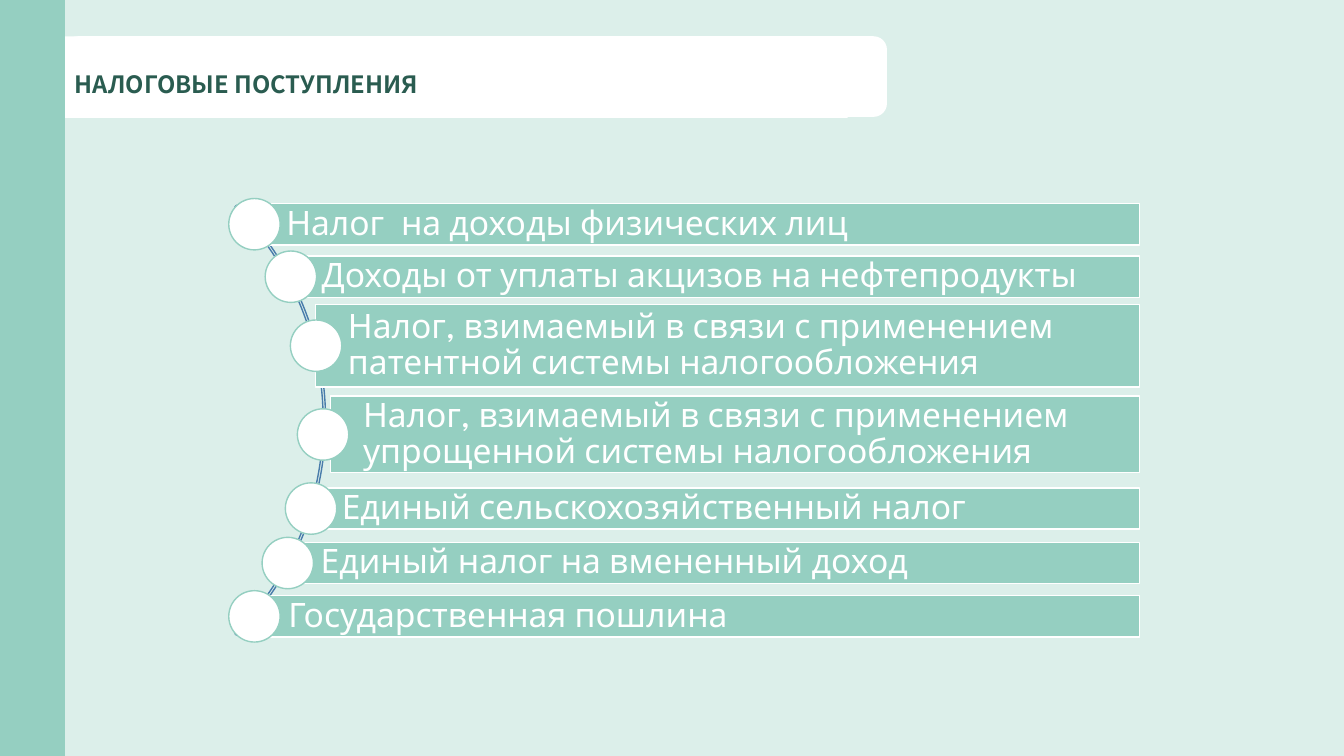
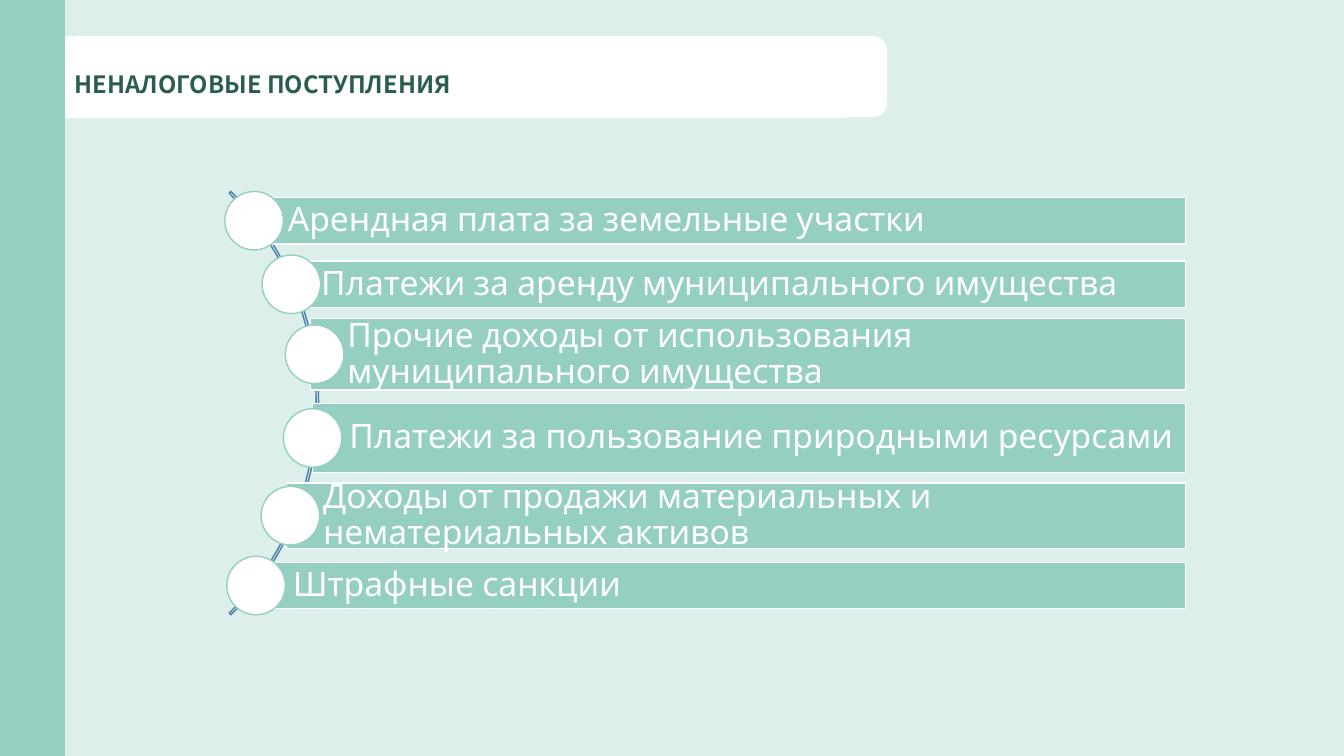
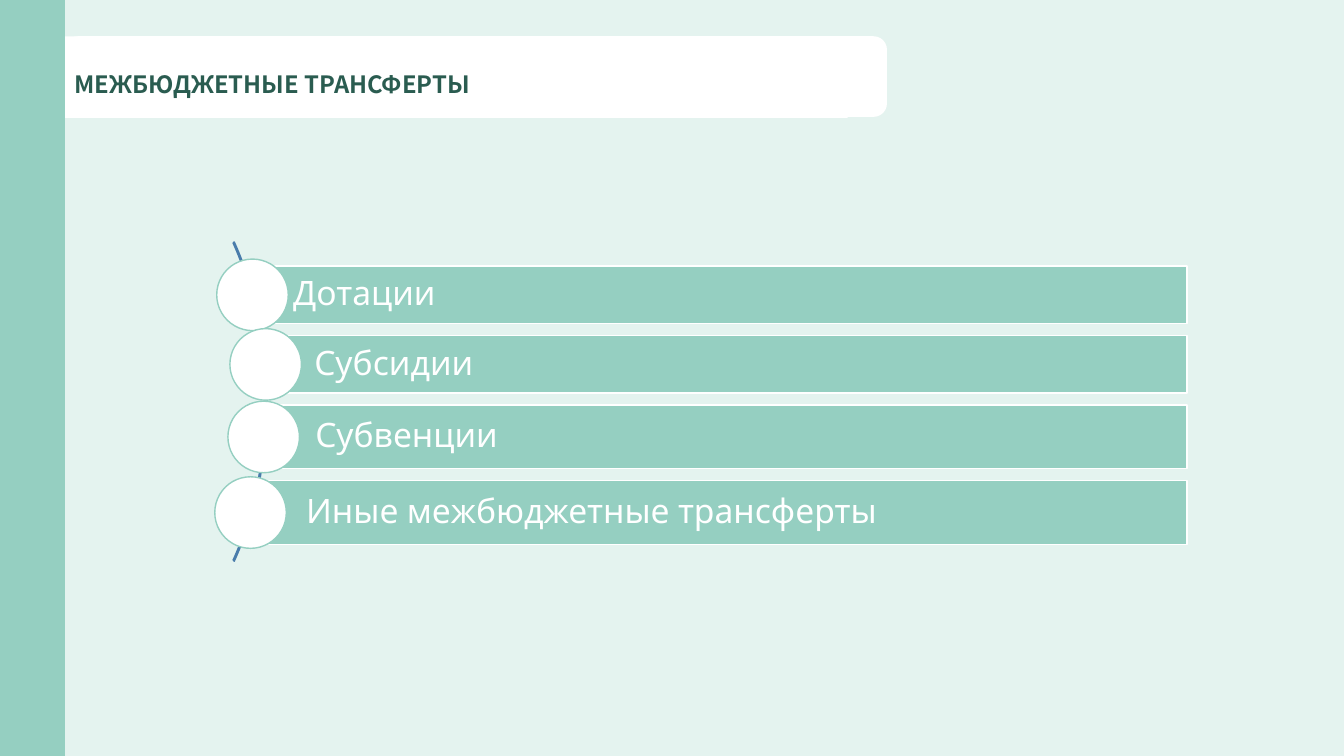
"""Build three slides on the sources of budget revenue."""
import dataclasses

import pptx
import pptx.dml.color
import pptx.enum.shapes
import pptx.enum.text
import pptx.util

Pt = pptx.util.Pt
SHAPES = pptx.enum.shapes.MSO_SHAPE
ANCHORS = pptx.enum.text.MSO_ANCHOR

WHITE = "FFFFFF"
MINT = "95CFC1"
DARK_GREEN = "2A5C50"
ARC_BLUE = "497CAB"
TITLE_FONT = "Noto Sans CJK JP"
LIST_FONT = "League Spartan"
SLIDE_WIDTH, SLIDE_HEIGHT = 960, 540
BAND_WIDTH = 46.4
TITLE_BOX = (46.1, 25.9, 587.5, 57.6)


@dataclasses.dataclass
class Revenue:
    """One kind of revenue, placed relative to its list."""
    text: str
    bar_left: float
    bar_top: float
    bar_height: float
    dot_left: float


@dataclasses.dataclass
class RevenueSlide:
    """Content and measures of one slide; arc is left offset, width, height."""
    title: str
    background: str
    box: tuple
    arc: tuple
    dot_size: float
    revenues: list


REVENUE_SLIDES = [
    RevenueSlide(
        "НАЛОГОВЫЕ ПОСТУПЛЕНИЯ", "DCEFEA",
        (163.4, 145.4, 650.4, 309.6), (-365, 434.2, 434.2), 36.7,
        [
            Revenue("Налог  на доходы физических лиц", 18, 0, 29.5, 0),
            Revenue("Доходы от уплаты акцизов на нефтепродукты", 43.2, 37.5, 29.5, 26),
            Revenue("Налог, взимаемый в связи с применением патентной системы налогообложения",
                    62, 72, 59, 44),
            Revenue("Налог, взимаемый в связи с применением упрощенной системы налогообложения",
                    72.8, 137.6, 54.7, 49),
            Revenue("Единый сельскохозяйственный налог", 57.6, 203.1, 29.5, 40.4),
            Revenue("Единый налог на вмененный доход", 42.5, 242, 29.5, 23.8),
            Revenue("Государственная пошлина", 19.5, 280.1, 29.5, 0),
        ]),
    RevenueSlide(
        "НЕНАЛОГОВЫЕ ПОСТУПЛЕНИЯ", "DCEFEA",
        (160.6, 141.1, 686.2, 293.8), (-360.7, 427.7, 427.7), 41.8,
        [
            Revenue("Арендная плата за земельные участки", 18.7, 0, 33.1, 0),
            Revenue("Платежи за аренду муниципального имущества", 42.5, 45.4, 33.1, 26.6),
            Revenue("Прочие доходы от использования муниципального имущества",
                    61.2, 86.4, 51.1, 43.2),
            Revenue("Платежи за пользование природными ресурсами", 62.6, 146.9, 49.7, 41.8),
            Revenue("Доходы от продажи материальных и нематериальных активов",
                    43.9, 203.8, 46.8, 25.9),
            Revenue("Штрафные санкции", 22.3, 260.6, 33.1, 1.4),
        ]),
    RevenueSlide(
        "МЕЖБЮДЖЕТНЫЕ ТРАНСФЕРТЫ", "E4F3EF",
        (153.4, 185, 694.4, 203.8), (-237.6, 275, 408.2), 51.1,
        [
            Revenue("Дотации", 23.8, 5.1, 41, 1.4),
            Revenue("Субсидии", 38.9, 54.8, 41, 10.8),
            Revenue("Субвенции", 39.6, 104.4, 45.4, 9.4),
            Revenue("Иные межбюджетные трансферты", 33.1, 158.4, 45.4, 0),
        ]),
]


def paint(color_format, color):
    """Set a fill, line or font colour from a hex string."""
    color_format.rgb = pptx.dml.color.RGBColor.from_string(color)


def add_figure(slide, preset, box, fill=None, line=None):
    """Add a preset shape with an optional fill and a one-point line."""
    figure = slide.shapes.add_shape(preset, *(Pt(length) for length in box))
    figure.shadow.inherit = False
    if fill:
        figure.fill.solid()
        paint(figure.fill.fore_color, fill)
    else:
        figure.fill.background()
    if line:
        paint(figure.line.color, line)
        figure.line.width = Pt(1)
    else:
        figure.line.fill.background()
    return figure


def write(figure, text, font, size, color, spacing, anchor, bold=False):
    """Write one left-aligned paragraph into a shape."""
    frame = figure.text_frame
    frame.word_wrap = True
    frame.vertical_anchor = anchor
    paragraph = frame.paragraphs[0]
    paragraph.text = text
    paragraph.alignment = pptx.enum.text.PP_ALIGN.LEFT
    paragraph.line_spacing = spacing
    paragraph.font.name = font
    paragraph.font.size = Pt(size)
    paragraph.font.bold = bold
    paint(paragraph.font.color, color)


def add_title(slide, box, text):
    """Draw the white title card, square on the left and rounded on the right."""
    left, top, width, height = box
    add_figure(slide, SHAPES.ROUNDED_RECTANGLE, box, WHITE)
    heading = add_figure(slide, SHAPES.RECTANGLE, (left, top, width - 28, height + 0.7), WHITE)
    write(heading, text, TITLE_FONT, 17, DARK_GREEN, 2.0, ANCHORS.TOP, bold=True)


def add_revenue_list(slide, box, arc, dot_size, revenues):
    """Draw an arc with a dot and a labelled bar for each revenue."""
    left, top, width, height = box
    arc_left, arc_width, arc_height = arc
    arc_top = top + (height - arc_height) / 2
    curve = add_figure(slide, SHAPES.BLOCK_ARC,
                       (left + arc_left, arc_top, arc_width, arc_height), line=ARC_BLUE)
    for index, value in enumerate((189, 27, 0.004)):
        curve.adjustments[index] = value
    for revenue in revenues:
        bar_top = top + revenue.bar_top
        bar = add_figure(slide, SHAPES.RECTANGLE,
                         (left + revenue.bar_left, bar_top,
                          width - revenue.bar_left, revenue.bar_height), MINT, WHITE)
        write(bar, revenue.text, LIST_FONT, 24, WHITE, 0.9, ANCHORS.MIDDLE)
        frame = bar.text_frame
        frame.margin_left = Pt(0.63 * dot_size)
        frame.margin_top = frame.margin_right = frame.margin_bottom = Pt(5)
        dot_top = bar_top + (revenue.bar_height - dot_size) / 2
        add_figure(slide, SHAPES.OVAL,
                   (left + revenue.dot_left, dot_top, dot_size, dot_size), WHITE, MINT)


def add_revenue_slide(deck, content):
    """Add a slide with its background, title card, side band and list."""
    slide = deck.slides.add_slide(deck.slide_layouts[6])
    slide.background.fill.solid()
    paint(slide.background.fill.fore_color, content.background)
    add_title(slide, TITLE_BOX, content.title)
    add_figure(slide, SHAPES.RECTANGLE, (0, 0, BAND_WIDTH, SLIDE_HEIGHT), MINT)
    add_revenue_list(slide, content.box, content.arc, content.dot_size, content.revenues)


def main():
    """Build and save the presentation."""
    deck = pptx.Presentation()
    deck.slide_width, deck.slide_height = Pt(SLIDE_WIDTH), Pt(SLIDE_HEIGHT)
    for content in REVENUE_SLIDES:
        add_revenue_slide(deck, content)
    deck.save("out.pptx")


if __name__ == "__main__":
    main()
